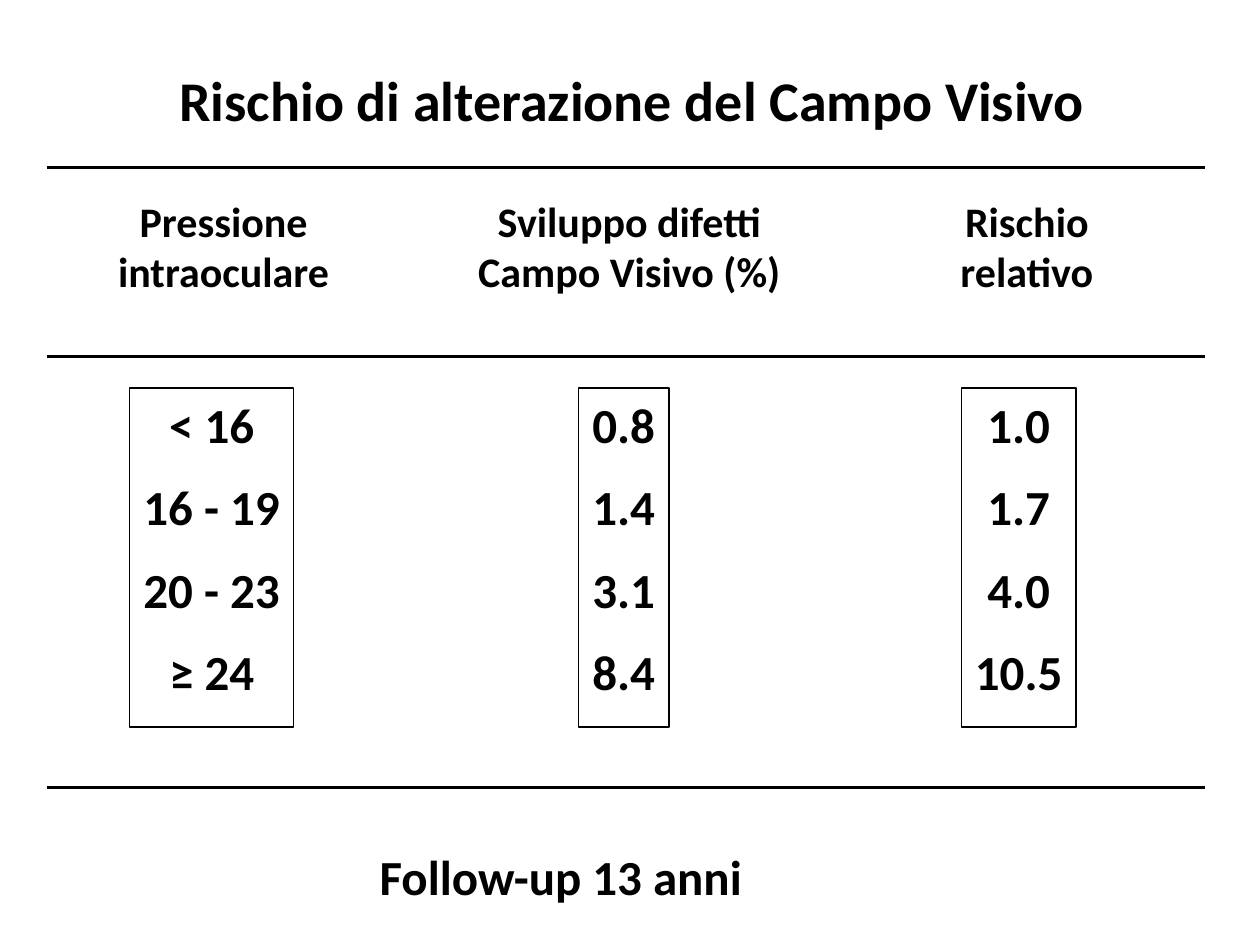
from pptx import Presentation
from pptx import util as u
from pptx.dml.color import RGBColor
from pptx.enum import shapes, text
from pptx.oxml.ns import qn
from lxml import etree

COLOURS = {"ink": "000000", "paper": "FFFFFF"}
FONT = "Calibri"
RULE_LEFT, RULE_RIGHT = 0.37, 9.56
RULE_TOPS = (1.33, 2.83, 6.25)
HEADING_TOP, HEADING_HEIGHT = 1.5, 0.91
VALUES_TOP, VALUES_HEIGHT = 3.08, 2.69

# heading, heading left and width, values, values left and width
COLUMNS = [
    ("Pressione intraoculare", 0.59, 2.37,
     ["< 16", "16 - 19", "20 - 23", "≥ 24"], 1.03, 1.3),
    ("Sviluppo difetti Campo Visivo (%)", 3.33, 3.33,
     ["0.8", "1.4", "3.1", "8.4"], 4.59, 0.72),
    ("Rischio relativo", 7.26, 1.78,
     ["1.0", "1.7", "4.0", "10.5"], 7.63, 0.91),
]


def colour(name):
    return RGBColor.from_string(COLOURS[name])


def inches(*lengths):
    return [u.Inches(length) for length in lengths]


def write(shape, lines, size=28, wrap=False, gap=13.5):
    """Set centred bold lines, with a gap in points between them."""
    frame = shape.text_frame
    frame.auto_size = text.MSO_AUTO_SIZE.NONE
    frame.word_wrap = wrap
    frame.vertical_anchor = text.MSO_ANCHOR.TOP
    for index, line in enumerate(lines):
        para = frame.add_paragraph() if index else frame.paragraphs[0]
        para.alignment = text.PP_ALIGN.CENTER
        para.space_before = u.Pt(gap if index else 0)
        span = para.add_run()
        span.text = line
        span.font.name = FONT
        span.font.size = u.Pt(size)
        span.font.bold = True
        span.font.color.rgb = colour("ink")


def add_title(page, title, left, top, width, height):
    box = page.shapes.title
    box.left, box.top, box.width, box.height = inches(left, top, width, height)
    write(box, [title], size=32)


def add_label(page, label, left, top, width, height, **style):
    box = page.shapes.add_textbox(*inches(left, top, width, height))
    write(box, [label], **style)


def add_value_box(page, values, left, width):
    box = page.shapes.add_shape(
        shapes.MSO_SHAPE.RECTANGLE,
        *inches(left, VALUES_TOP, width, VALUES_HEIGHT))
    box.shadow.inherit = False
    box.fill.background()
    box.line.color.rgb = colour("ink")
    box.line.width = u.Pt(0.75)
    write(box, values)


def add_rule(page, top):
    rule = page.shapes.add_connector(
        shapes.MSO_CONNECTOR.STRAIGHT,
        *inches(RULE_LEFT, top, RULE_RIGHT, top))
    rule.line.color.rgb = colour("ink")
    rule.line.width = u.Pt(1.5)
    etree.SubElement(rule._element.spPr, qn("a:effectLst"))


def main():
    deck = Presentation()
    deck.slide_width, deck.slide_height = inches(10, 7.5)
    page = deck.slides.add_slide(deck.slide_layouts[5])
    page.background.fill.solid()
    page.background.fill.fore_color.rgb = colour("paper")

    add_title(page, "Rischio di alterazione del Campo Visivo",
              1.29, 0.47, 7.46, 1.09)
    for heading, left, width, values, box_left, box_width in COLUMNS:
        add_label(page, heading, left, HEADING_TOP, width, HEADING_HEIGHT,
                  size=24, wrap=True)
        add_value_box(page, values, box_left, box_width)
    for top in RULE_TOPS:
        add_rule(page, top)
    add_label(page, "Follow-up 13 anni", 2.85, 6.67, 3.2, 0.57)

    deck.save("out.pptx")


if __name__ == "__main__":
    main()
